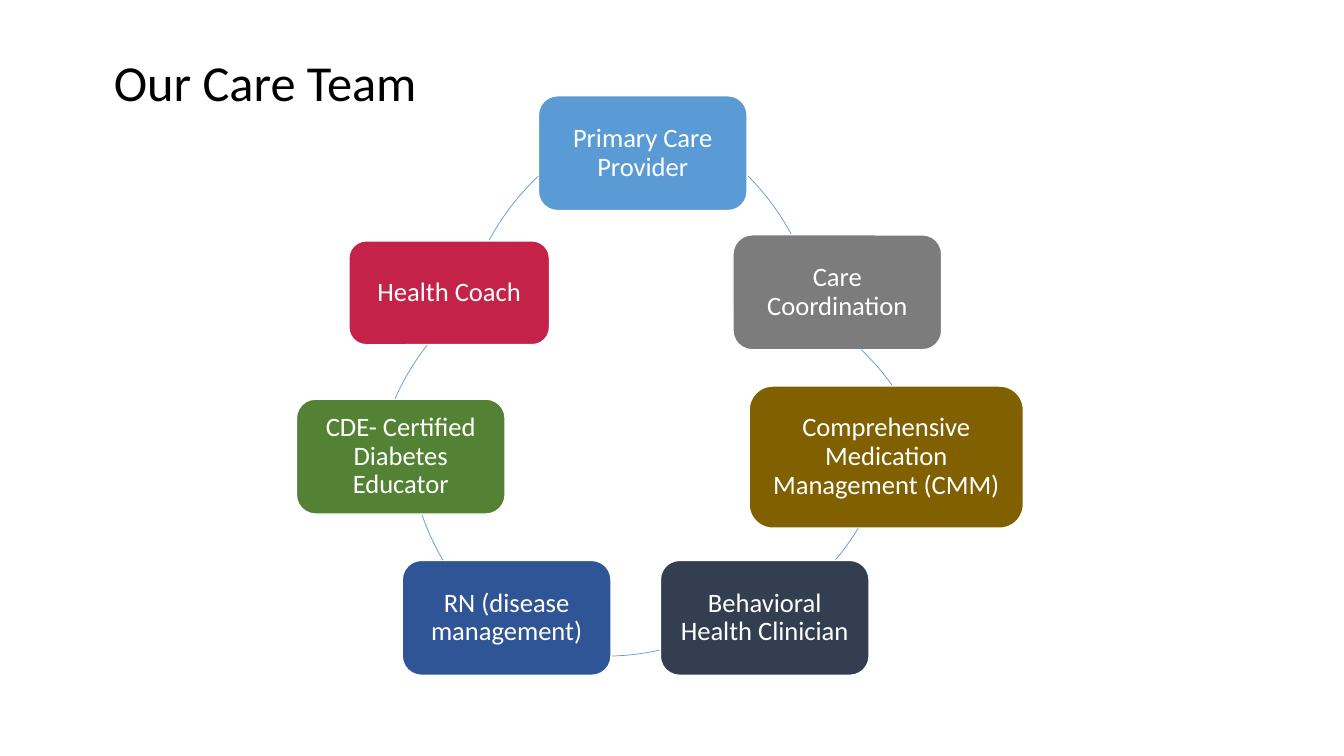
from dataclasses import dataclass
from math import atan2, degrees

from pptx import Presentation
from pptx.dml.color import RGBColor
from pptx.enum.shapes import MSO_SHAPE as Shape
from pptx.enum.text import MSO_ANCHOR as Anchor, PP_ALIGN as Align
from pptx.util import Emu, Pt

PX = 9144  # EMU per px, 100 px to the inch


@dataclass(frozen=True)
class Theme:
    font: str = "Calibri"
    title_size: int = 36
    role_size: int = 19
    title: str = "000000"
    white: str = "FFFFFF"
    blue: str = "5B9BD5"
    gray: str = "7C7C7C"
    gold: str = "806000"
    slate: str = "333F50"
    navy: str = "2F5597"
    green: str = "548235"
    red: str = "C42249"


@dataclass(frozen=True)
class Role:
    text: str
    color: str
    left: int
    top: int
    width: int = 207
    height: int = 114


@dataclass(frozen=True)
class Arc:
    """Clockwise piece of a circle, from start to end."""
    left: int
    top: int
    start: tuple[int, int]
    end: tuple[int, int]


T = Theme()
DIAMETER = 494
INSET = 14

ROLES = [
    Role("Primary Care Provider", T.blue, 534, 95),
    Role("Care Coordination", T.gray, 727, 233),
    Role("Comprehensive Medication Management (CMM)", T.gold, 743, 383, 272, 141),
    Role("Behavioral Health Clinician", T.slate, 655, 556),
    Role("RN (disease management)", T.navy, 399, 556),
    Role("CDE- Certified Diabetes Educator", T.green, 294, 396),
    Role("Health Coach", T.red, 346, 239, 199, 103),
]

ARCS = [
    Arc(320, 102, (742, 175), (785, 233)),
    Arc(437, 279, (854, 347), (884, 383)),
    Arc(393, 149, (851, 524), (827, 556)),
    Arc(353, 157, (654, 644), (607, 650)),
    Arc(405, 183, (439, 556), (418, 511)),
    Arc(371, 248, (392, 396), (424, 342)),
    Arc(456, 108, (485, 238), (534, 175)),
]


def px(*values: int) -> list[Emu]:
    return [Emu(v * PX) for v in values]


def rgb(color: str) -> RGBColor:
    return RGBColor.from_string(color)


def write(tf, text: str, size: int, color: str, align: Align) -> None:
    tf.word_wrap = True
    p = tf.paragraphs[0]
    p.alignment = align
    p.line_spacing = 0.9
    r = p.add_run()
    r.text = text
    r.font.name = T.font
    r.font.size = Pt(size)
    r.font.color.rgb = rgb(color)


def add_title(s, text: str) -> None:
    tf = s.shapes.add_textbox(*px(92, 40, 1150, 145)).text_frame
    tf.vertical_anchor = Anchor.TOP
    tf.margin_left, tf.margin_top = px(21, 18)
    write(tf, text, T.title_size, T.title, Align.LEFT)


def add_arc(s, arc: Arc) -> None:
    sp = s.shapes.add_shape(Shape.ARC, *px(arc.left, arc.top, DIAMETER, DIAMETER))
    cx, cy = arc.left + DIAMETER / 2, arc.top + DIAMETER / 2
    for i, (x, y) in enumerate((arc.start, arc.end)):
        # Angles are stored in 1/60000 degree, adjustments in 1/100000
        sp.adjustments[i] = degrees(atan2(y - cy, x - cx)) % 360 * 0.6
    sp.shadow.inherit = False
    sp.fill.background()
    sp.line.color.rgb = rgb(T.blue)
    sp.line.width = Pt(0.5)


def add_role(s, role: Role) -> None:
    sp = s.shapes.add_shape(Shape.ROUNDED_RECTANGLE,
                            *px(role.left, role.top, role.width, role.height))
    sp.shadow.inherit = False
    sp.fill.solid()
    sp.fill.fore_color.rgb = rgb(role.color)
    sp.line.color.rgb = rgb(T.white)
    sp.line.width = Pt(1)
    tf = sp.text_frame
    tf.vertical_anchor = Anchor.MIDDLE
    tf.margin_left, tf.margin_top, tf.margin_right, tf.margin_bottom = px(*[INSET] * 4)
    write(tf, role.text, T.role_size, T.white, Align.CENTER)


def main() -> None:
    prs = Presentation()
    prs.slide_width, prs.slide_height = px(1333, 750)
    s = prs.slides.add_slide(prs.slide_layouts[6])

    # Title
    add_title(s, "Our Care Team")

    # Cycle: each role is followed by the arc to the next one
    for role, arc in zip(ROLES, ARCS):
        add_role(s, role)
        add_arc(s, arc)

    prs.save("out.pptx")


if __name__ == "__main__":
    main()
